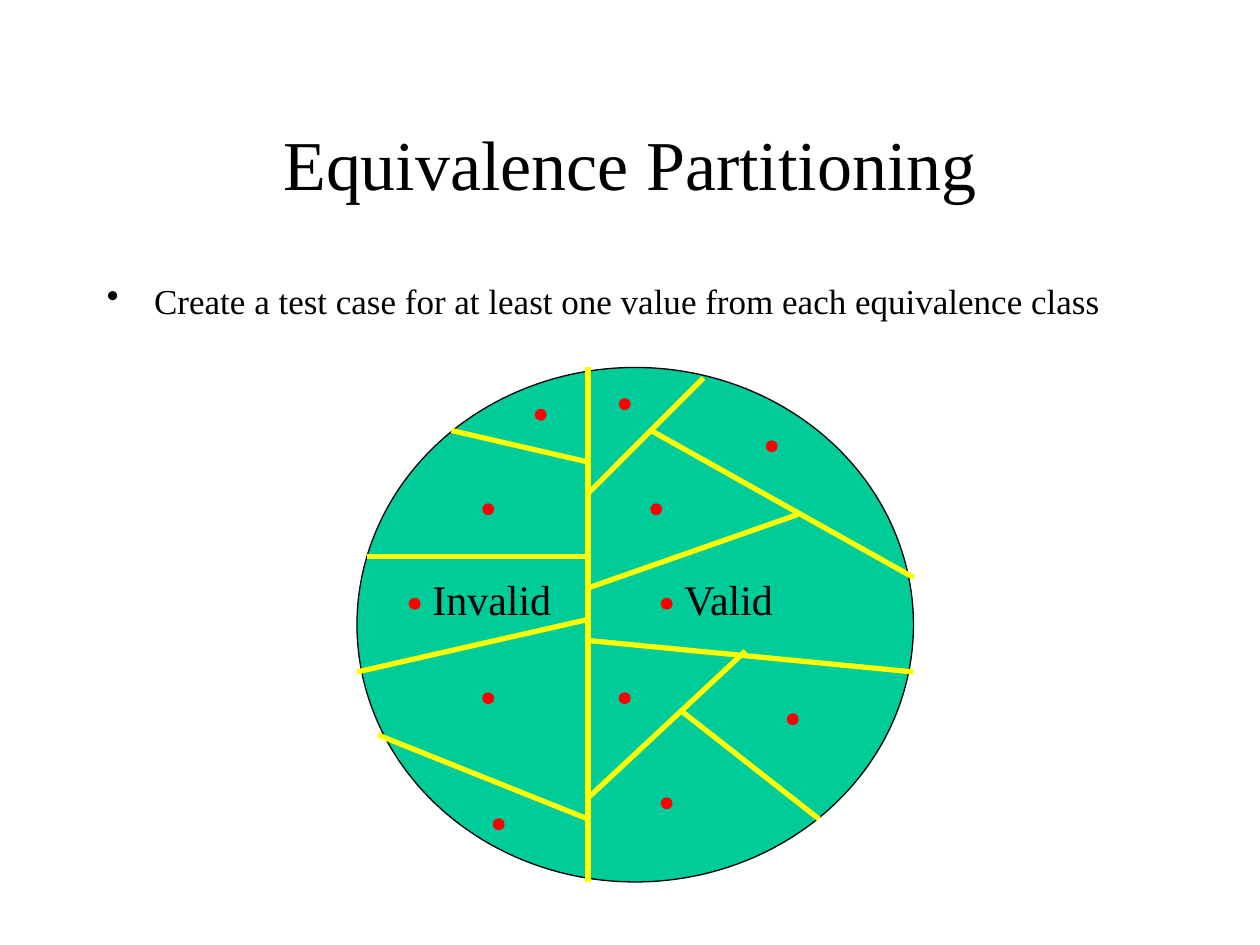
from dataclasses import dataclass

import lxml.etree
import pptx
import pptx.dml.color
import pptx.enum.shapes
import pptx.enum.text
import pptx.oxml.ns
import pptx.util

COLORS = {
    "text": "000000",
    "domain": "00CC99",
    "outline": "000000",
    "boundary": "FFFF00",
    "test_case": "FF0000",
}
FONT = "Times New Roman"
DIVIDE = 56  # column of the border between invalid and valid values


@dataclass(frozen=True)
class Boundary:
    x1: float
    y1: float
    x2: float
    y2: float


@dataclass(frozen=True)
class TestCase:
    x: float
    y: float


@dataclass(frozen=True)
class Label:
    text: str
    x: float
    y: float
    width: float


BOUNDARIES = [
    Boundary(DIVIDE, 35, DIVIDE, 84),
    # valid side
    Boundary(67, 36, DIVIDE, 47),
    Boundary(62, 41, 87, 55),
    Boundary(76, 49, DIVIDE, 56),
    Boundary(DIVIDE, 61, 87, 64),
    Boundary(71, 62, DIVIDE, 76),
    Boundary(65, 67.8, 78, 78),
    # invalid side
    Boundary(DIVIDE, 44, 43, 41),
    Boundary(DIVIDE, 53, 35, 53),
    Boundary(DIVIDE, 59, 34, 64),
    Boundary(DIVIDE, 78, 36, 70),
]
TEST_CASES = [
    TestCase(62, 48), TestCase(59, 38), TestCase(73, 42), TestCase(63, 57),
    TestCase(59, 66), TestCase(75, 68), TestCase(63, 76),
    TestCase(51, 39), TestCase(46, 48), TestCase(39, 57),
    TestCase(46, 66), TestCase(47, 78),
]
LABELS = [Label("Valid", 64, 54, 11.3), Label("Invalid", 40, 54, 13.7)]


def grid(steps: float) -> pptx.util.Length:
    """Length of a number of grid steps, twelve to the inch."""
    return pptx.util.Cm(steps * 2.54 / 12)


def rgb(name: str) -> pptx.dml.color.RGBColor:
    return pptx.dml.color.RGBColor.from_string(COLORS[name])


def format_paragraph(paragraph, size: float) -> None:
    paragraph.font.name = FONT
    paragraph.font.size = pptx.util.Pt(size)
    paragraph.font.color.rgb = rgb("text")


def add_ellipse(slide, x: float, y: float, width: float, height: float,
                fill: str, outline: str) -> None:
    ellipse = slide.shapes.add_shape(
        pptx.enum.shapes.MSO_SHAPE.OVAL,
        grid(x), grid(y), grid(width), grid(height))
    ellipse.shadow.inherit = False
    ellipse.fill.solid()
    ellipse.fill.fore_color.rgb = rgb(fill)
    ellipse.line.color.rgb = rgb(outline)
    ellipse.line.width = pptx.util.Pt(0.75)


def add_boundary(slide, boundary: Boundary) -> None:
    border = slide.shapes.add_connector(
        pptx.enum.shapes.MSO_CONNECTOR.STRAIGHT,
        grid(boundary.x1), grid(boundary.y1),
        grid(boundary.x2), grid(boundary.y2))
    border.line.color.rgb = rgb("boundary")
    border.line.width = pptx.util.Pt(3)
    lxml.etree.SubElement(border._element.spPr, pptx.oxml.ns.qn("a:effectLst"))


def add_label(slide, label: Label) -> None:
    frame = slide.shapes.add_textbox(
        grid(label.x), grid(label.y), grid(label.width), grid(6)).text_frame
    frame.word_wrap = False
    frame.auto_size = pptx.enum.text.MSO_AUTO_SIZE.SHAPE_TO_FIT_TEXT
    frame.text = label.text
    format_paragraph(frame.paragraphs[0], 24)


def add_title(slide, text: str) -> None:
    title = slide.shapes.title
    title.left, title.top = grid(9), grid(8)
    title.width, title.height = grid(102), grid(15)
    frame = title.text_frame
    frame.text = text
    frame.auto_size = pptx.enum.text.MSO_AUTO_SIZE.NONE
    frame.vertical_anchor = pptx.enum.text.MSO_ANCHOR.MIDDLE
    frame.paragraphs[0].alignment = pptx.enum.text.PP_ALIGN.CENTER
    format_paragraph(frame.paragraphs[0], 40)


def add_bullet(slide, text: str) -> None:
    frame = slide.shapes.add_textbox(
        grid(9), grid(26), grid(102), grid(11)).text_frame
    frame.word_wrap = True
    frame.text = text
    advice = frame.paragraphs[0]
    format_paragraph(advice, 20)
    advice.space_before = pptx.util.Pt(4)
    properties = advice._p.get_or_add_pPr()
    indent = grid(4.5)
    properties.set("marL", str(indent))
    properties.set("indent", str(-indent))
    bullet = lxml.etree.SubElement(properties, pptx.oxml.ns.qn("a:buChar"))
    bullet.set("char", "•")


def main() -> None:
    presentation = pptx.Presentation()
    presentation.slide_width = pptx.util.Cm(25.4)
    presentation.slide_height = pptx.util.Cm(19.05)
    slide = presentation.slides.add_slide(
        presentation.slide_layouts.get_by_name("Title Only"))

    add_title(slide, "Equivalence Partitioning")
    add_ellipse(slide, 34, 35, 53, 49, "domain", "outline")
    add_bullet(slide, "Create a test case for at least one value "
                      "from each equivalence class")
    for label in LABELS:
        add_label(slide, label)
    for boundary in BOUNDARIES:
        add_boundary(slide, boundary)
    for case in TEST_CASES:
        add_ellipse(slide, case.x, case.y, 1, 1, "test_case", "test_case")

    presentation.save("out.pptx")


if __name__ == "__main__":
    main()
